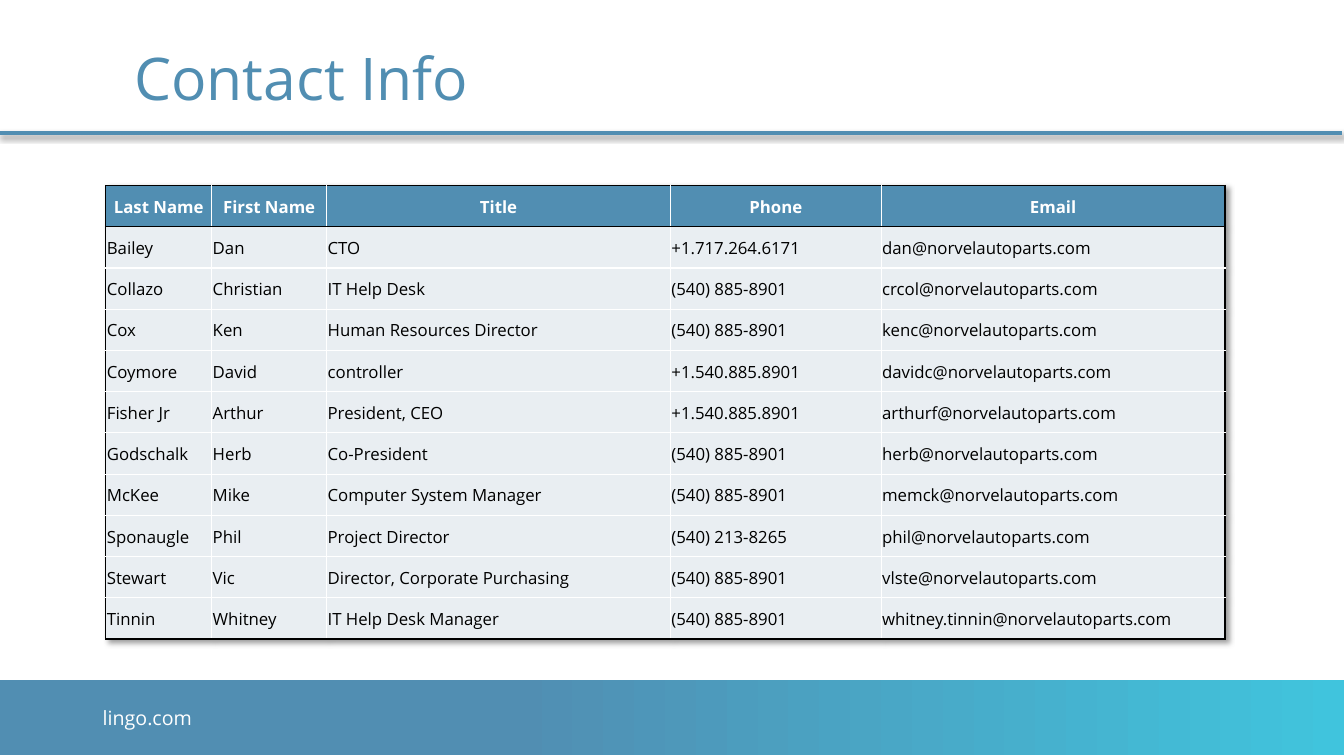
from dataclasses import dataclass

import lxml.etree
import pptx
import pptx.dml.color
import pptx.enum.shapes
import pptx.enum.text
import pptx.oxml
import pptx.oxml.ns
import pptx.util

Inches = pptx.util.Inches
Pt = pptx.util.Pt
RGB = pptx.dml.color.RGBColor.from_string
ALIGN = pptx.enum.text.PP_ALIGN
MIDDLE = pptx.enum.text.MSO_ANCHOR.MIDDLE


@dataclass(frozen=True)
class Theme:
    font: str = "Open Sans"
    blue: str = "518EB2"
    aqua: str = "40C4DD"
    pale: str = "E9EEF2"
    white: str = "FFFFFF"
    black: str = "000000"
    title_size: int = 42
    footer_size: int = 14
    table_size: int = 12


THEME = Theme()
DOMAIN = "norvelautoparts.com"
HEADINGS = ("Last Name", "First Name", "Title", "Phone", "Email")
COLUMN_WIDTHS = (1.05, 1.14, 3.41, 2.09, 3.41)
TABLE_HEIGHT = 4.5
CONTACTS = (
    ("Bailey", "Dan", "CTO", "+1.717.264.6171", "dan"),
    ("Collazo", "Christian", "IT Help Desk", "(540) 885-8901", "crcol"),
    ("Cox", "Ken", "Human Resources Director", "(540) 885-8901", "kenc"),
    ("Coymore", "David", "controller", "+1.540.885.8901", "davidc"),
    ("Fisher Jr", "Arthur", "President, CEO", "+1.540.885.8901", "arthurf"),
    ("Godschalk", "Herb", "Co-President", "(540) 885-8901", "herb"),
    ("McKee", "Mike", "Computer System Manager", "(540) 885-8901", "memck"),
    ("Sponaugle", "Phil", "Project Director", "(540) 213-8265", "phil"),
    ("Stewart", "Vic", "Director, Corporate Purchasing", "(540) 885-8901", "vlste"),
    ("Tinnin", "Whitney", "IT Help Desk Manager", "(540) 885-8901", "whitney.tinnin"),
)


def apply_format(target, values):
    for attribute, value in values.items():
        setattr(target, attribute, value)


def write_text(frame, text, size, color, bold=False, **paragraph_format):
    paragraph = frame.paragraphs[0]
    apply_format(paragraph, paragraph_format)
    run = paragraph.add_run()
    run.text = text
    apply_format(run.font, {"name": THEME.font, "size": Pt(size), "bold": bold})
    run.font.color.rgb = RGB(color)


def shadow_effect():
    return pptx.oxml.parse_xml(
        f'<a:effectLst {pptx.oxml.ns.nsdecls("a")}>'
        f'<a:outerShdw blurRad="{Pt(4)}" dist="{Pt(3)}" dir="2700000" algn="tl" rotWithShape="0">'
        f'<a:srgbClr val="{THEME.black}"><a:alpha val="40000"/></a:srgbClr>'
        '</a:outerShdw></a:effectLst>'
    )


def add_title(slide, text):
    title = slide.shapes.title
    apply_format(title, {"left": Inches(1.23), "top": Inches(0.33),
                         "width": Inches(11.34), "height": Inches(0.96)})
    apply_format(title.text_frame, {"vertical_anchor": MIDDLE, "word_wrap": True})
    write_text(title.text_frame, text, THEME.title_size, THEME.blue,
               alignment=ALIGN.LEFT, line_spacing=0.9)


def add_title_rule(slide):
    rule = slide.shapes.add_connector(
        pptx.enum.shapes.MSO_CONNECTOR.STRAIGHT,
        Inches(-0.03), Inches(1.32), Inches(13.31), Inches(1.32))
    rule.line.width = Pt(2.25)
    rule.line.color.rgb = RGB(THEME.blue)
    rule._element.spPr.append(shadow_effect())


def add_footer(slide, text):
    band = slide.shapes.add_shape(
        pptx.enum.shapes.MSO_SHAPE.RECTANGLE,
        Inches(0), Inches(6.75), Inches(13.33), Inches(0.74))
    band.shadow.inherit = False
    band.line.fill.background()
    band.fill.gradient()
    band.fill.gradient_angle = 0
    stops = ((0.38, THEME.blue), (1, THEME.aqua))
    for stop, (position, color) in zip(band.fill.gradient_stops, stops):
        stop.position = position
        stop.color.rgb = RGB(color)
    address = slide.shapes.add_textbox(
        Inches(0.92), Inches(6.95), Inches(2.52), Inches(0.4))
    address.text_frame.word_wrap = True
    write_text(address.text_frame, text, THEME.footer_size, THEME.white)


def add_borders(cell, colors):
    properties = cell._tc.get_or_add_tcPr()
    for side, color in colors.items():
        properties.append(pptx.oxml.parse_xml(
            f'<a:ln{side} {pptx.oxml.ns.nsdecls("a")} w="{Pt(1)}">'
            f'<a:solidFill><a:srgbClr val="{color}"/></a:solidFill></a:ln{side}>'))


def fill_cell(cell, text, is_heading, borders):
    apply_format(cell, {"vertical_anchor": MIDDLE, "margin_left": Inches(0.01),
                        "margin_top": Inches(0.01), "margin_right": Inches(0.01),
                        "margin_bottom": Inches(0)})
    add_borders(cell, borders)
    cell.fill.solid()
    cell.fill.fore_color.rgb = RGB(THEME.blue if is_heading else THEME.pale)
    write_text(cell.text_frame, text, THEME.table_size,
               THEME.white if is_heading else THEME.black, bold=is_heading,
               alignment=ALIGN.CENTER if is_heading else ALIGN.LEFT)


def add_contact_table(slide):
    rows = [HEADINGS] + [(*person, f"{mailbox}@{DOMAIN}") for *person, mailbox in CONTACTS]
    last_row, last_column = len(rows) - 1, len(HEADINGS) - 1
    contacts = slide.shapes.add_table(
        len(rows), len(HEADINGS), Inches(1.05), Inches(1.84),
        Inches(sum(COLUMN_WIDTHS)), Inches(TABLE_HEIGHT)).table
    contacts.horz_banding = False
    contacts._tbl.tblPr.insert(0, shadow_effect())
    for column, width in zip(contacts.columns, COLUMN_WIDTHS):
        column.width = Inches(width)
    for row_index, texts in enumerate(rows):
        contacts.rows[row_index].height = Inches(TABLE_HEIGHT / len(rows))
        for column_index, text in enumerate(texts):
            outer_sides = {
                "L": column_index == 0,
                "R": column_index == last_column,
                "T": row_index <= 1,
                "B": row_index in (0, last_row),
            }
            borders = {side: THEME.black if outer else THEME.white
                       for side, outer in outer_sides.items()}
            fill_cell(contacts.cell(row_index, column_index), text, row_index == 0, borders)


def main():
    deck = pptx.Presentation()
    apply_format(deck, {"slide_width": Inches(13.33), "slide_height": Inches(7.5)})
    slide = deck.slides.add_slide(deck.slide_layouts[5])
    add_footer(slide, "lingo.com")
    add_title_rule(slide)
    add_title(slide, "Contact Info")
    add_contact_table(slide)
    deck.save("out.pptx")


if __name__ == "__main__":
    main()
